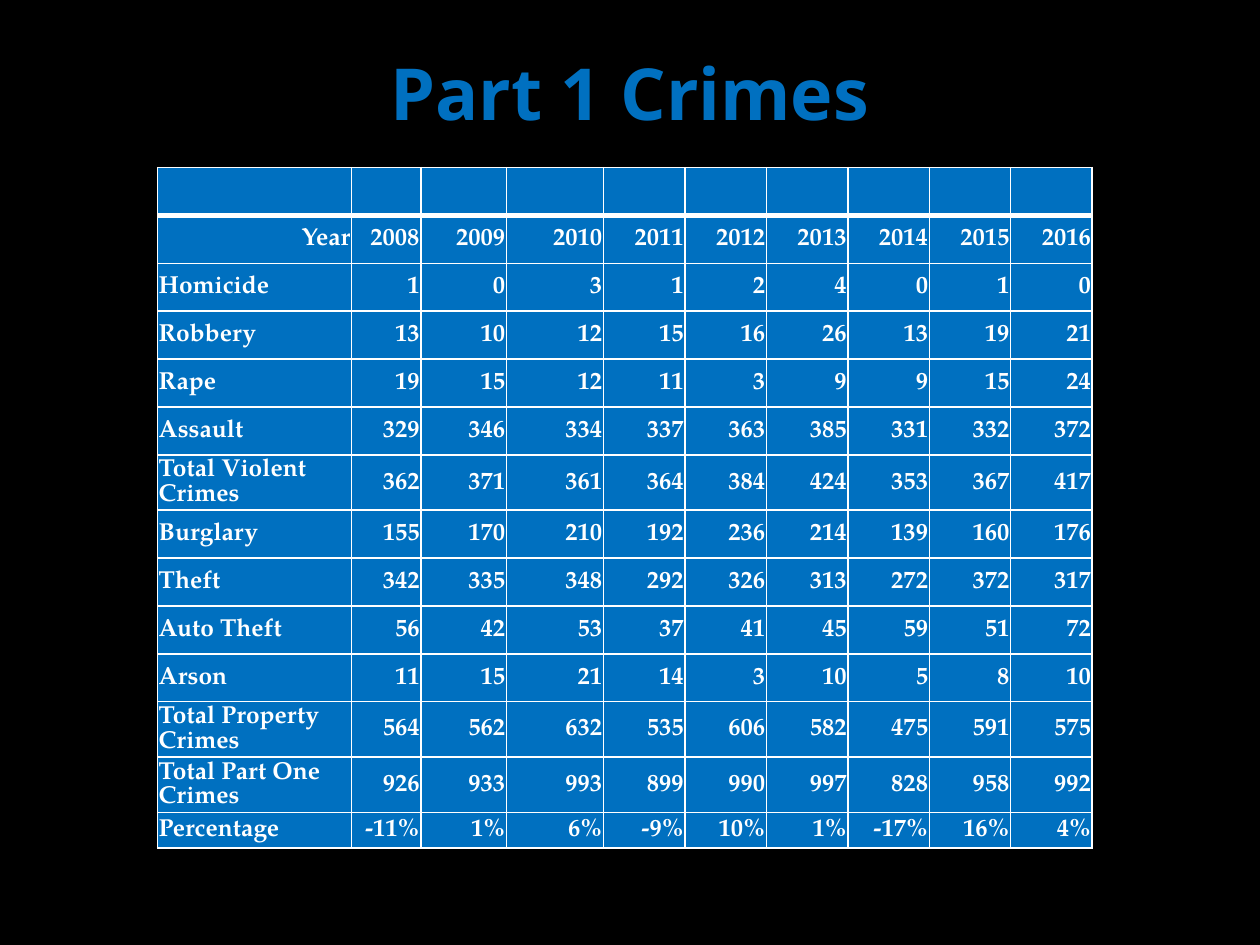
import pptx
import pptx.util
import pptx.dml.color
import pptx.enum.text
import pptx.oxml
import pptx.oxml.ns

Inches, Pt = pptx.util.Inches, pptx.util.Pt
ALIGN = pptx.enum.text.PP_ALIGN
MIDDLE = pptx.enum.text.MSO_ANCHOR.MIDDLE

COLORS = {"background": "000000", "blue": "0070C0", "white": "FFFFFF"}

CRIMES = [
    ("Year", "2008 2009 2010 2011 2012 2013 2014 2015 2016"),
    ("Homicide", "1 0 3 1 2 4 0 1 0"),
    ("Robbery", "13 10 12 15 16 26 13 19 21"),
    ("Rape", "19 15 12 11 3 9 9 15 24"),
    ("Assault", "329 346 334 337 363 385 331 332 372"),
    ("Total Violent Crimes", "362 371 361 364 384 424 353 367 417"),
    ("Burglary", "155 170 210 192 236 214 139 160 176"),
    ("Theft", "342 335 348 292 326 313 272 372 317"),
    ("Auto Theft", "56 42 53 37 41 45 59 51 72"),
    ("Arson", "11 15 21 14 3 10 5 8 10"),
    ("Total Property Crimes", "564 562 632 535 606 582 475 591 575"),
    ("Total Part One Crimes", "926 933 993 899 990 997 828 958 992"),
    ("Percentage", "-11% 1% 6% -9% 10% 1% -17% 16% 4%"),
]


def rgb(name):
    return pptx.dml.color.RGBColor.from_string(COLORS[name])


def set_text(tf, text, *, font, size, color, align, spacing=None):
    tf.word_wrap = True
    p = tf.paragraphs[0]
    p.alignment = align
    if spacing:
        p.line_spacing = spacing
    r = p.add_run()
    r.text = text
    r.font.name = font
    r.font.size = Pt(size)
    r.font.bold = True
    r.font.color.rgb = rgb(color)


def set_borders(cell, **widths):
    """Draw white borders, widths in points by side: L, R, T, B."""
    tc_pr = cell._tc.get_or_add_tcPr()
    for i, (side, width) in enumerate(widths.items()):
        ln = pptx.oxml.parse_xml(
            f'<a:ln{side} {pptx.oxml.ns.nsdecls("a")} w="{Pt(width)}">'
            f'<a:solidFill><a:srgbClr val="{COLORS["white"]}"/></a:solidFill>'
            f'</a:ln{side}>')
        tc_pr.insert(i, ln)  # borders come before the fill


def add_title(s, left, top, width, height):
    sp = s.shapes.add_textbox(left, top, width, height)
    sp.text_frame.vertical_anchor = MIDDLE
    set_text(sp.text_frame, "Part 1 Crimes", font="Open Sans", size=41,
             color="blue", align=ALIGN.CENTER)


def add_crime_table(s, left, top, width, height):
    rows = [("", "")] + CRIMES
    n_cols = 10
    table = s.shapes.add_table(len(rows), n_cols, left, top, width, height).table

    # Column widths: the last six years share what the first columns leave
    widths = [Inches(w) for w in (1.54, 0.55, 0.68, 0.77)]
    equal = n_cols - len(widths)
    widths += [(width - sum(widths)) // equal] * equal
    for column, w in zip(table.columns, widths):
        column.width = w

    for i, (label, values) in enumerate(rows):
        # Two-line totals are taller, the percentage row is shorter
        row_height = 0.44 if label.startswith("Total") else 0.38
        table.rows[i].height = Inches(0.28 if label == "Percentage" else row_height)
        texts = [label] + (values.split() or [""] * (n_cols - 1))
        for j, text in enumerate(texts):
            cell = table.cell(i, j)
            cell.fill.solid()
            cell.fill.fore_color.rgb = rgb("blue")
            cell.vertical_anchor = MIDDLE
            cell.margin_left = cell.margin_right = cell.margin_top = Inches(0.01)
            cell.margin_bottom = 0
            # A thick rule separates the empty header row from the data
            set_borders(cell, L=1, R=1, T=3 if i == 1 else 1, B=3 if i == 0 else 1)
            if text:
                is_label = j == 0 and label != "Year"
                set_text(cell.text_frame, text, font="TeX Gyre Pagella", size=14,
                         color="white", spacing=Pt(14),
                         align=ALIGN.LEFT if is_label else ALIGN.RIGHT)


def main():
    prs = pptx.Presentation()
    prs.slide_width, prs.slide_height = Inches(10), Inches(7.5)
    s = prs.slides.add_slide(prs.slide_layouts[6])
    s.background.fill.solid()
    s.background.fill.fore_color.rgb = rgb("background")
    add_title(s, Inches(0.5), Inches(0.25), Inches(9), Inches(0.95))
    add_crime_table(s, Inches(1.25), Inches(1.33), Inches(7.42), Inches(5.42))
    prs.save("out.pptx")


if __name__ == "__main__":
    main()
